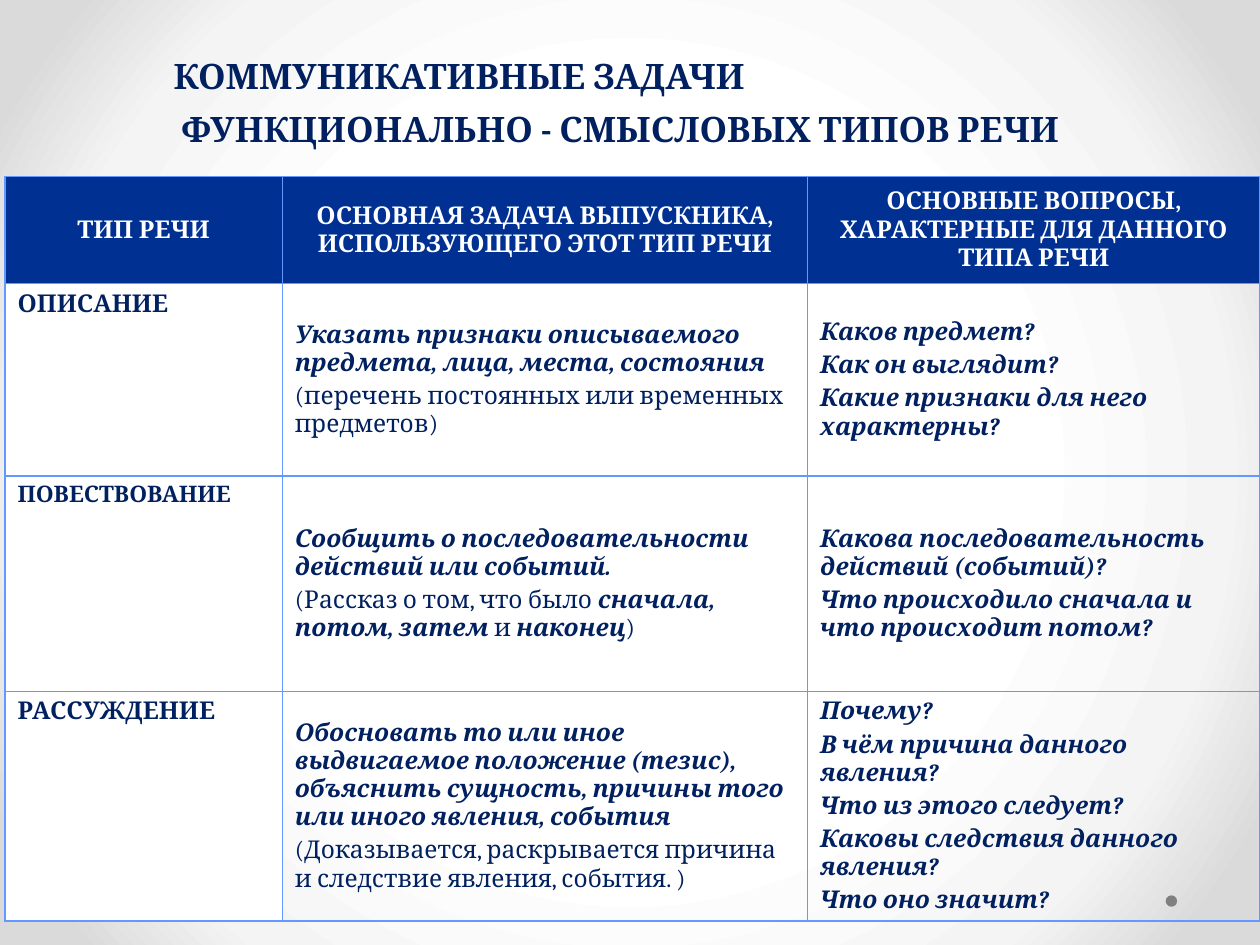
"""Build a slide with a table of the communicative tasks of speech types."""
from pptx import Presentation
from pptx.dml.color import RGBColor
from pptx.enum.shapes import MSO_SHAPE as Shape
from pptx.enum.text import MSO_ANCHOR as Anchor, PP_ALIGN as Align
from pptx.oxml import parse_xml
from pptx.oxml.ns import nsdecls
from pptx.util import Cm, Pt

NAVY = RGBColor(0x00, 0x20, 0x60)
BLUE = RGBColor(0x00, 0x31, 0x92)
BORDER = RGBColor(0x65, 0x98, 0xFF)
WHITE = RGBColor(0xFF, 0xFF, 0xFF)
GREY = RGBColor(0x80, 0x80, 0x80)
BACKDROP = [
    (50, WHITE),
    (76, RGBColor(0xF4, 0xF4, 0xF4)),
    (92, RGBColor(0xDA, 0xDA, 0xDA)),
]

TITLE = "КОММУНИКАТИВНЫЕ ЗАДАЧИ\v ФУНКЦИОНАЛЬНО - СМЫСЛОВЫХ ТИПОВ РЕЧИ"
HEADINGS = [
    "ТИП РЕЧИ",
    "ОСНОВНАЯ ЗАДАЧА ВЫПУСКНИКА, ИСПОЛЬЗУЮЩЕГО ЭТОТ ТИП РЕЧИ",
    "ОСНОВНЫЕ ВОПРОСЫ, ХАРАКТЕРНЫЕ ДЛЯ ДАННОГО ТИПА РЕЧИ",
]
SPEECH_TYPES = [
    ("ОПИСАНИЕ", 14,
     ["*Указать признаки описываемого предмета, лица, места, состояния*",
      "(перечень постоянных или временных предметов)"],
     ["*Каков предмет?*", "*Как он выглядит?*",
      "*Какие признаки для него характерны?*"]),
    ("ПОВЕСТВОВАНИЕ", 13,
     ["*Сообщить о последовательности действий или событий.*",
      "(Рассказ о том, что было *сначала, потом, затем *и* наконец*)"],
     ["*Какова последовательность действий (событий)?*",
      "*Что происходило сначала и что происходит потом?*"]),
    ("РАССУЖДЕНИЕ", 14,
     ["*Обосновать то или иное выдвигаемое положение (тезис), объяснить "
      "сущность, причины того или иного явления, события*",
      "(Доказывается, раскрывается причина и следствие явления, события. )"],
     ["*Почему?*", "*В чём причина данного явления?*",
      "*Что из этого следует?*", "*Каковы следствия данного явления?*",
      "*Что оно значит?*"]),
]
COLUMN_WIDTHS = [5.59, 10.59, 9.12]
ROW_HEIGHTS = [2.16, 3.88, 4.34, 4.62]


def set_font(span, color, **values):
    values = {"name": "Cambria", "size": Pt(14), "bold": True, "italic": False} | values
    for name, value in values.items():
        setattr(span.font, name, value)
    span.font.color.rgb = color


def paint_background(page):
    stops = "".join(
        f'<a:gs pos="{place * 1000}"><a:srgbClr val="{color}"/></a:gs>'
        for place, color in BACKDROP)
    page.element.cSld.insert(0, parse_xml(
        f'<p:bg {nsdecls("p", "a")}><p:bgPr><a:gradFill rotWithShape="1">'
        f'<a:gsLst>{stops}</a:gsLst><a:path path="circle">'
        '<a:fillToRect l="50000" t="50000" r="50000" b="50000"/></a:path>'
        '</a:gradFill><a:effectLst/></p:bgPr></p:bg>'))


def add_title(page):
    box = page.shapes.add_textbox(Cm(3.5), Cm(1), Cm(21.9), Cm(1.9))
    frame = box.text_frame
    for side in ("left", "top", "right", "bottom"):
        setattr(frame, f"margin_{side}", 0)
    frame.word_wrap = True
    frame.vertical_anchor = Anchor.MIDDLE
    para = frame.paragraphs[0]
    para.text = TITLE
    para.line_spacing = Pt(30)
    for span in para.runs:
        set_font(span, NAVY, size=Pt(20))


def add_dot(page):
    dot = page.shapes.add_shape(Shape.OVAL, Cm(23.5), Cm(18.05), Cm(0.23), Cm(0.23))
    dot.shadow.inherit = False
    dot.fill.solid()
    dot.fill.fore_color.rgb = GREY
    dot.line.fill.background()


def style_cell(cell, fill, anchor):
    cell.vertical_anchor = anchor
    if fill is None:
        cell.fill.background()
    else:
        cell.fill.solid()
        cell.fill.fore_color.rgb = fill
    properties = cell._tc.get_or_add_tcPr()
    for index, side in enumerate("LRTB"):
        properties.insert(index, parse_xml(
            f'<a:ln{side} {nsdecls("a")} w="12700"><a:solidFill>'
            f'<a:srgbClr val="{BORDER}"/></a:solidFill></a:ln{side}>'))


def write_label(cell, text, color, size=14, align=Align.LEFT):
    para = cell.text_frame.paragraphs[0]
    para.alignment = align
    span = para.add_run()
    span.text = text
    set_font(span, color, size=Pt(size))


def write_lines(cell, lines):
    frame = cell.text_frame
    for number, line in enumerate(lines):
        para = frame.add_paragraph() if number else frame.paragraphs[0]
        if number:
            para.space_before = Pt(2.8)
        for index, piece in enumerate(line.split("*")):
            if piece:
                span = para.add_run()
                span.text = piece
                strong = index % 2 == 1
                set_font(span, NAVY, bold=strong, italic=strong)


def add_speech_table(page):
    table = page.shapes.add_table(
        len(ROW_HEIGHTS), len(COLUMN_WIDTHS), Cm(0.1), Cm(3.56),
        Cm(sum(COLUMN_WIDTHS)), Cm(sum(ROW_HEIGHTS))).table
    for column, width in zip(table.columns, COLUMN_WIDTHS):
        column.width = Cm(width)
    for row, height in zip(table.rows, ROW_HEIGHTS):
        row.height = Cm(height)
    for column, heading in enumerate(HEADINGS):
        cell = table.cell(0, column)
        style_cell(cell, BLUE, Anchor.MIDDLE)
        write_label(cell, heading, WHITE, align=Align.CENTER)
    for row, (name, size, *details) in enumerate(SPEECH_TYPES, 1):
        style_cell(table.cell(row, 0), WHITE, Anchor.TOP)
        write_label(table.cell(row, 0), name, NAVY, size)
        for column, lines in enumerate(details, 1):
            style_cell(table.cell(row, column), None, Anchor.MIDDLE)
            write_lines(table.cell(row, column), lines)


def main():
    deck = Presentation()
    deck.slide_width, deck.slide_height = Cm(25.4), Cm(19.05)
    page = deck.slides.add_slide(deck.slide_layouts[6])
    paint_background(page)
    add_dot(page)
    add_speech_table(page)
    add_title(page)
    deck.save("out.pptx")


if __name__ == "__main__":
    main()
